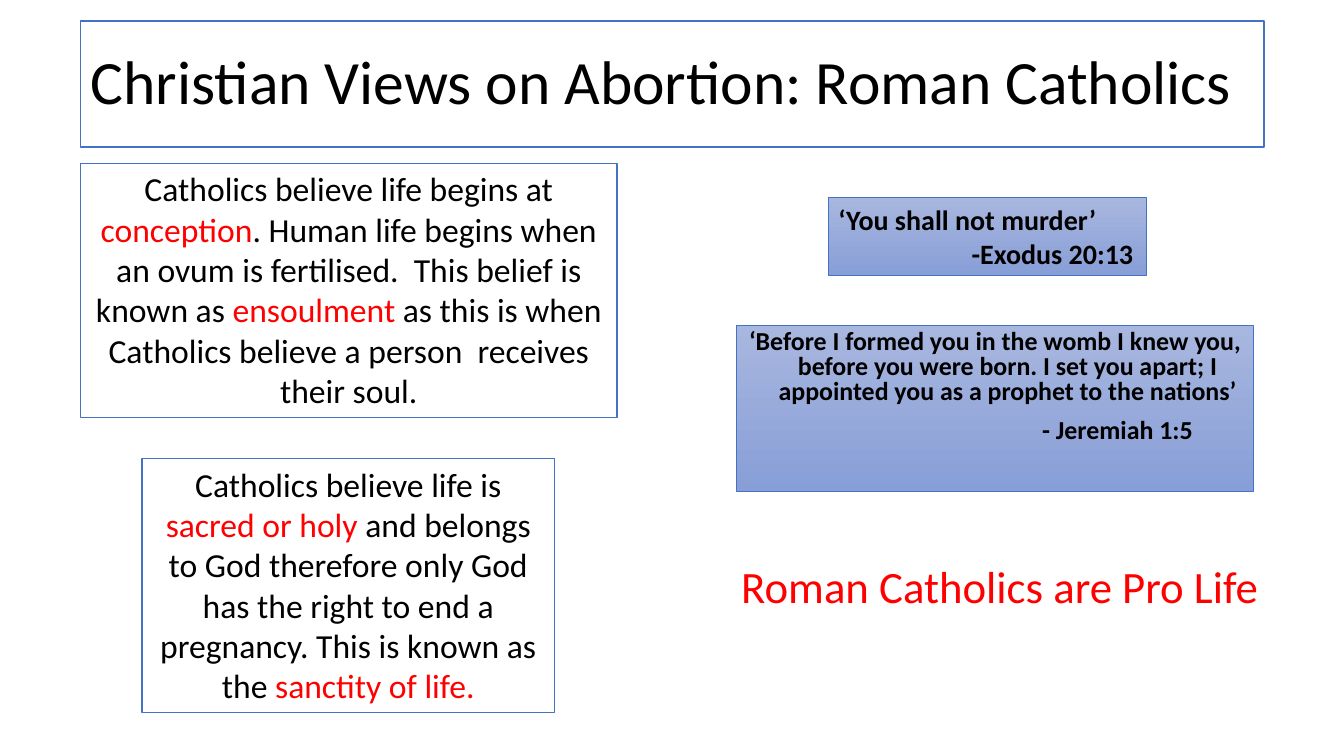
from pptx import Presentation
from pptx.dml.color import RGBColor
from pptx.enum import shapes, text
from pptx.util import Pt

BLACK, RED, WHITE, BLUE = "000000", "FF0000", "FFFFFF", "4472C4"
QUOTE_TOP, QUOTE_BOTTOM = "A8B7DF", "889ED7"
LEFT, CENTER, RIGHT = text.PP_ALIGN.LEFT, text.PP_ALIGN.CENTER, text.PP_ALIGN.RIGHT


def rgb(value):
    return RGBColor.from_string(value)


def place(box, left, top, width, height):
    box.left, box.top, box.width, box.height = Pt(left), Pt(top), Pt(width), Pt(height)


def outline(box, weight):
    box.line.color.rgb = rgb(BLUE)
    box.line.width = Pt(weight)


def frame_text(box, anchor=text.MSO_ANCHOR.TOP):
    frame = box.text_frame
    frame.word_wrap = True
    frame.auto_size = text.MSO_AUTO_SIZE.NONE
    frame.vertical_anchor = anchor
    return frame


def write(para, spans, size, align, bold=False):
    """Fill a paragraph with (wording, colour) spans."""
    para.alignment = align
    para.font.name, para.font.size, para.font.bold = "Calibri", Pt(size), bold
    for wording, color in spans:
        span = para.add_run()
        span.text = wording
        span.font.color.rgb = rgb(color)


def add_title(page, wording):
    box = page.shapes.title
    place(box, 57.6, 15.12, 845.28, 90)
    box.fill.solid()
    box.fill.fore_color.rgb = rgb(WHITE)
    outline(box, 1)
    para = frame_text(box, text.MSO_ANCHOR.MIDDLE).paragraphs[0]
    para.line_spacing = 0.9
    write(para, [(wording, BLACK)], 44, LEFT)


def add_box(page, area, weight):
    box = page.shapes.add_shape(shapes.MSO_SHAPE.RECTANGLE, *map(Pt, area))
    box.shadow.inherit = False
    outline(box, weight)
    return box


def add_belief(page, area, spans):
    box = add_box(page, area, 1)
    box.fill.solid()
    box.fill.fore_color.rgb = rgb(WHITE)
    write(frame_text(box).paragraphs[0], spans, 24, CENTER)


def add_quote(page, area, quote, verse, size, align, verse_margin):
    """Draw a shaded quotation with its verse set to the right; return its paragraphs."""
    box = add_box(page, area, 0.5)
    box.fill.gradient()
    box.fill.gradient_angle = 270
    for stop, color in zip(box.fill.gradient_stops, (QUOTE_TOP, QUOTE_BOTTOM)):
        stop.color.rgb = rgb(color)
    frame = frame_text(box)
    write(frame.paragraphs[0], [(quote, BLACK)], size, align, bold=True)
    source = frame.add_paragraph()
    write(source, [(verse, BLACK)], size, RIGHT, bold=True)
    source._p.get_or_add_pPr().set("marR", str(Pt(verse_margin)))
    return frame.paragraphs


def add_conclusion(page, area, wording):
    box = page.shapes.add_textbox(*map(Pt, area))
    write(frame_text(box).paragraphs[0], [(wording, RED)], 32, CENTER)


def main():
    deck = Presentation()
    deck.slide_width, deck.slide_height = Pt(960), Pt(540)
    page = deck.slides.add_slide(deck.slide_layouts[5])
    add_title(page, "Christian Views on Abortion: Roman Catholics")

    # Beliefs on the left
    add_belief(page, (57.6, 116.64, 383.04, 181.44), [
        ("Catholics believe life begins at ", BLACK),
        ("conception", RED),
        (". Human life begins when an ovum is fertilised.  This belief is known as ", BLACK),
        ("ensoulment ", RED),
        ("as this is when Catholics believe a person  receives their soul.", BLACK),
    ])
    add_belief(page, (101.52, 327.6, 294.48, 181.44), [
        ("Catholics believe life is ", BLACK),
        ("sacred or holy ", RED),
        ("and belongs to God therefore only God has the right to end a pregnancy. "
         "This is known as the ", BLACK),
        ("sanctity of life.", RED),
    ])

    # Scripture on the right
    add_quote(page, (591.84, 141.12, 226.8, 55.44), "‘You shall not murder’",
              "-Exodus 20:13", 20, LEFT, 2)
    jeremiah = add_quote(
        page, (526.32, 232.56, 368.64, 118.8),
        "‘Before I formed you in the womb I knew you, before you were born. "
        "I set you apart; I appointed you as a prophet to the nations’",
        "- Jeremiah 1:5", 18.5, CENTER, 36)
    for para in jeremiah:
        para.line_spacing, para.space_before = 0.8, Pt(10)
    hanging = jeremiah[0]._p.get_or_add_pPr()
    hanging.set("marL", str(Pt(18)))
    hanging.set("indent", str(-Pt(18)))

    add_conclusion(page, (468.72, 395.28, 491.04, 46.08), "Roman Catholics are Pro Life")
    deck.save("out.pptx")


if __name__ == "__main__":
    main()
